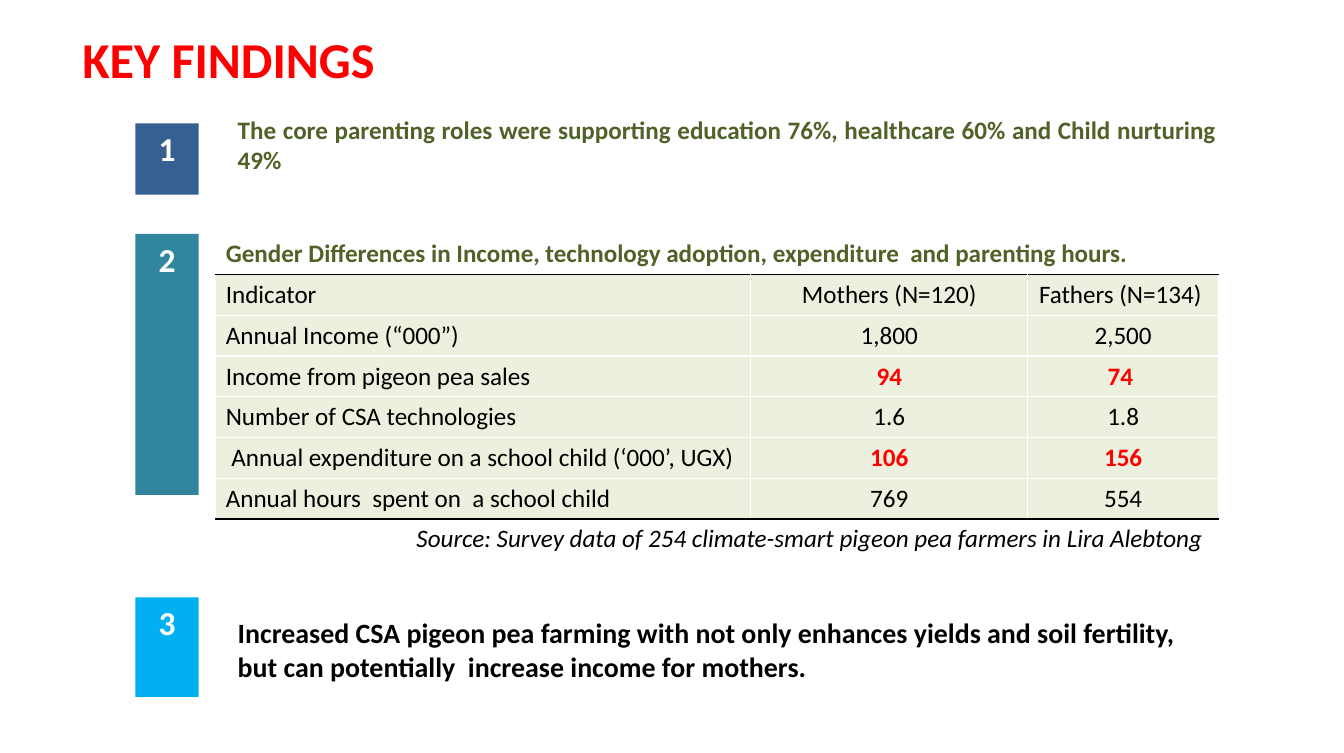
from lxml import etree
from pptx import Presentation, util as u
from pptx.dml.color import RGBColor
from pptx.enum import shapes, text
from pptx.oxml.ns import qn

FONT = "Calibri"
COLORS = {"red": "FF0000", "olive": "4F6228", "black": "000000", "white": "FFFFFF",
          "pale": "EBF1DE", "navy": "376092", "teal": "31859C", "sky": "00B0F0"}
TITLE = "KEY FINDINGS"
MARKERS = [("1", 1.23, 0.71, "navy"), ("2", 2.33, 2.6, "teal"), ("3", 5.95, 0.99, "sky")]
FINDINGS = [
    ("The core parenting roles were supporting education 76%, healthcare 60% and Child nurturing 49%",
     (2.27, 1.01, 9.95, 0.86), 18, "olive", text.PP_ALIGN.JUSTIFY, 12),
    ("Increased CSA pigeon pea farming with not only enhances yields and soil fertility, "
     "but can potentially  increase income for mothers.",
     (2.27, 6, 9.77, 0.94), 20, "black", text.PP_ALIGN.LEFT, 0),
]
CAPTION = "Gender Differences in Income, technology adoption, expenditure  and parenting hours."
SOURCE = "Source: Survey data of 254 climate-smart pigeon pea farmers in Lira Alebtong "
INDICATORS = [
    ("Indicator", "Mothers (N=120)", "Fathers (N=134) "),
    ("Annual Income (“000”)", "1,800", "2,500"),
    ("Income from pigeon pea sales", "94", "74 "),
    ("Number of CSA technologies", "1.6", "1.8"),
    (" Annual expenditure on a school child (‘000’, UGX)", "106", "156"),
    ("Annual hours  spent on  a school child", "769", "554"),
]
HIGHLIGHTED = {"94", "74 ", "106", "156"}
COLUMNS = [5.33, 2.76, 1.9]
ROW_HEIGHT = 0.4


def rgb(name):
    return RGBColor.from_string(COLORS[name])


def inches(*lengths):
    return [u.Inches(length) for length in lengths]


def write(frame, words, size, color, align=text.PP_ALIGN.LEFT, bold=True, italic=False):
    frame.text = words
    para = frame.paragraphs[0]
    para.alignment = align
    font = para.font
    font.name, font.size, font.bold, font.italic = FONT, u.Pt(size), bold, italic
    font.color.rgb = rgb(color)
    return para


def set_borders(cell, top, bottom):
    props = cell._tc.get_or_add_tcPr()
    for side, color in (("L", "white"), ("R", "white"), ("T", top), ("B", bottom)):
        line = etree.SubElement(props, qn(f"a:ln{side}"), w=str(u.Pt(1)))
        fill = etree.SubElement(line, qn("a:solidFill"))
        etree.SubElement(fill, qn("a:srgbClr"), val=COLORS[color])


def add_marker(page, number, top, height, color):
    box = page.shapes.add_shape(shapes.MSO_SHAPE.RECTANGLE, *inches(1.35, top, 0.63, height))
    box.shadow.inherit = False
    box.fill.solid()
    box.fill.fore_color.rgb = rgb(color)
    box.line.fill.background()
    box.text_frame.vertical_anchor = text.MSO_ANCHOR.TOP
    write(box.text_frame, number, 24, "white", text.PP_ALIGN.CENTER)


def add_finding(page, words, place, size, color, align, gap):
    frame = page.shapes.add_textbox(*inches(*place)).text_frame
    frame.word_wrap = True
    frame.vertical_anchor = text.MSO_ANCHOR.MIDDLE
    para = write(frame, words, size, color, align)
    para.space_before = para.space_after = u.Pt(gap)


def add_indicator_table(page):
    rows = [(CAPTION, "", ""), *INDICATORS, (SOURCE, "", "")]
    last = len(rows) - 1
    place = inches(2.15, 2.33, sum(COLUMNS), ROW_HEIGHT * len(rows))
    table = page.shapes.add_table(len(rows), len(COLUMNS), *place).table
    table.first_row = table.horz_banding = False
    for column, width in zip(table.columns, COLUMNS):
        column.width = u.Inches(width)
    for r, row in enumerate(rows):
        top = "black" if r in (1, last) else "white"
        bottom = "black" if r in (0, last - 1) else "white"
        for c, words in enumerate(row):
            cell = table.cell(r, c)
            set_borders(cell, top, bottom)
            cell.fill.solid()
            cell.fill.fore_color.rgb = rgb("white" if r in (0, last) else "pale")
            cell.vertical_anchor = text.MSO_ANCHOR.MIDDLE
            strong = words in HIGHLIGHTED
            color = "red" if strong else "olive" if r == 0 else "black"
            align = text.PP_ALIGN.CENTER if c else text.PP_ALIGN.LEFT
            if r == last:
                align = text.PP_ALIGN.RIGHT
            write(cell.text_frame, words, 18, color, align, strong or r == 0, r == last)
    for r in (0, last):
        table.cell(r, 0).merge(table.cell(r, len(COLUMNS) - 1))


def main():
    deck = Presentation()
    deck.slide_width, deck.slide_height = inches(13.39, 7.5)
    page = deck.slides.add_slide(deck.slide_layouts[5])
    title = page.shapes.title
    title.left, title.top, title.width, title.height = inches(0.72, 0.18, 11.5, 0.81)
    title.text_frame.vertical_anchor = text.MSO_ANCHOR.MIDDLE
    write(title.text_frame, TITLE, 36, "red")
    add_indicator_table(page)
    for marker in MARKERS:
        add_marker(page, *marker)
    for finding in FINDINGS:
        add_finding(page, *finding)
    deck.save("out.pptx")


if __name__ == "__main__":
    main()
